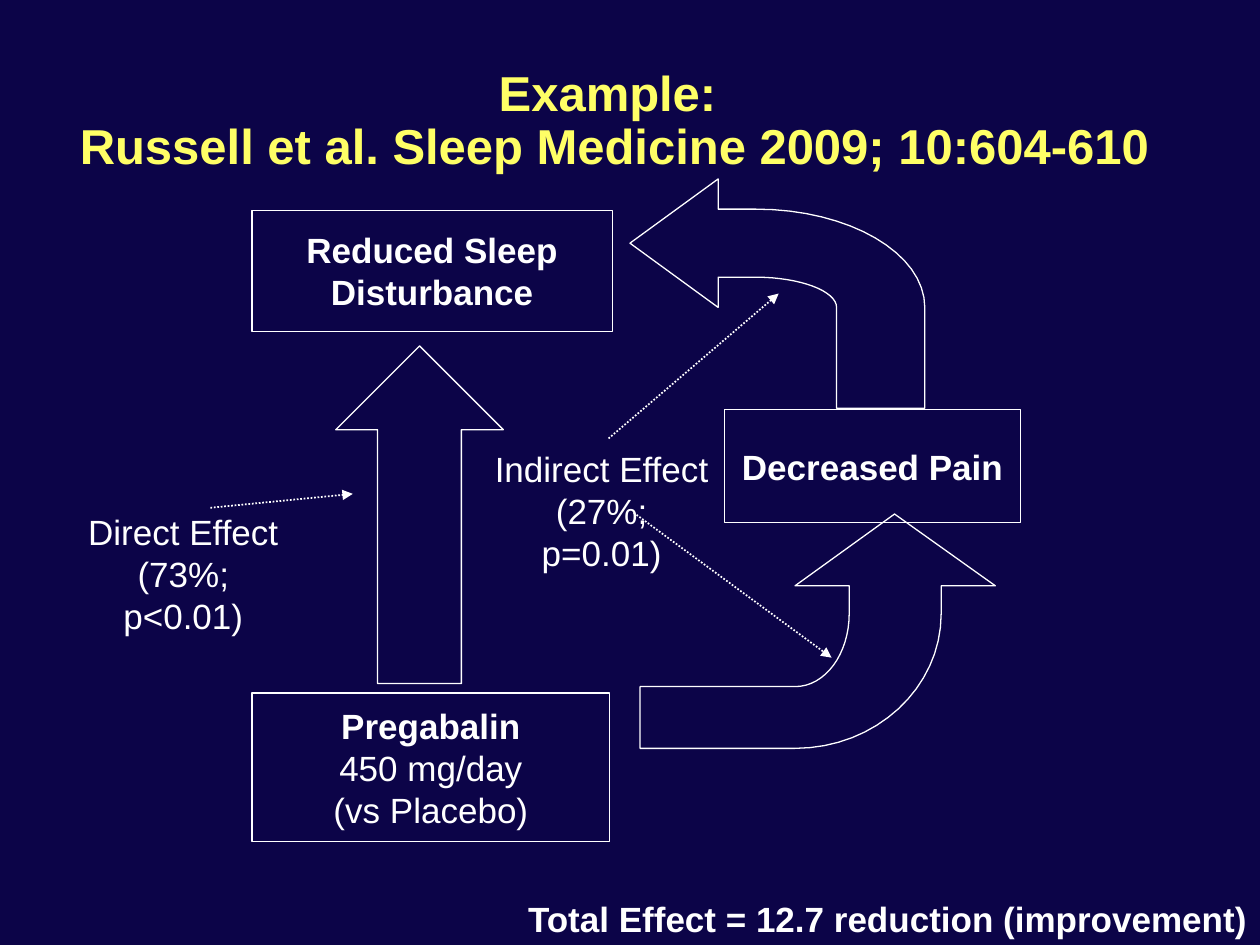
from typing import NamedTuple

from lxml.etree import SubElement
from pptx import Presentation
from pptx.dml.color import RGBColor
from pptx.enum.dml import MSO_LINE_DASH_STYLE as Dash
from pptx.enum.shapes import MSO_CONNECTOR as Connector, MSO_SHAPE as Shape
from pptx.enum.text import MSO_ANCHOR as Anchor, PP_ALIGN as Align
from pptx.oxml.ns import qn
from pptx.util import Inches, Pt

COLORS = {"background": "0C0448", "title": "FFFF66", "ink": "FFFFFF"}
CURVE_STEPS = 16


class Line(NamedTuple):
    text: str
    bold: bool = False


class Block(NamedTuple):
    at: tuple[float, float, float, float]
    lines: list[Line]
    wrap: bool = True
    size: int = 20
    color: str = "ink"
    spacing: float = 1.0


class Pointer(NamedTuple):
    start: tuple[float, float]
    end: tuple[float, float]


TITLE = Block(
    (0.25, 0.5, 9.25, 1.25),
    [Line("Example: \vRussell et al. Sleep Medicine 2009; 10:604-610", True)],
    size=28, color="title", spacing=0.9,
)
STAGES = [
    Block((2, 1.67, 2.86, 0.96), [Line("Reduced Sleep Disturbance", True)]),
    Block((2, 5.5, 2.84, 1.18),
          [Line("Pregabalin", True), Line("450 mg/day"), Line("(vs Placebo)")]),
    Block((5.75, 3.25, 2.35, 0.9), [Line("Decreased Pain", True)]),
]
EFFECTS = [
    Block((0.58, 4, 1.75, 1.1), [Line("Direct Effect "), Line("(73%; p<0.01)")]),
    Block((3.8, 3.5, 1.95, 0.77),
          [Line("Indirect Effect"), Line("(27%;\vp=0.01)")], wrap=False),
    Block((4.09, 7.07, 5.91, 0.43),
          [Line("Total Effect = 12.7 reduction (improvement)", True)], wrap=False),
]
POINTERS = [
    Pointer((5.03, 4.07), (6.6, 5.22)),
    Pointer((4.83, 3.48), (6.18, 2.33)),
    Pointer((1.67, 4.03), (2.8, 3.92)),
]
DRUG_TO_PAIN = [
    (7.1, 4.08), (7.9, 4.65), (7.47, 4.65), (7.47, 4.87),
    (7.47, 5.46, 6.95, 5.94, 6.31, 5.94), (5.08, 5.94), (5.08, 5.45),
    (6.31, 5.45), (6.55, 5.45, 6.74, 5.19, 6.74, 4.87), (6.74, 4.65), (6.31, 4.65),
]
PAIN_TO_SLEEP = [
    (5, 1.93), (5.7, 1.42), (5.7, 1.66), (6, 1.66),
    (6.74, 1.66, 7.34, 2.01, 7.34, 2.44), (7.34, 3.24), (6.64, 3.24),
    (6.64, 2.44), (6.64, 2.31, 6.35, 2.2, 6, 2.2), (5.7, 2.2), (5.7, 2.44),
]


def rgb(name: str) -> RGBColor:
    return RGBColor.from_string(COLORS[name])


def write(shape, block: Block, anchor: Anchor) -> None:
    frame = shape.text_frame
    frame.word_wrap = block.wrap
    frame.vertical_anchor = anchor
    for index, line in enumerate(block.lines):
        paragraph = frame.paragraphs[0] if index == 0 else frame.add_paragraph()
        paragraph.text = line.text
        paragraph.alignment = Align.CENTER
        paragraph.line_spacing = block.spacing
        formats = {"name": "Arial", "size": Pt(block.size), "bold": line.bold}
        for run in paragraph.runs:
            for attribute, value in formats.items():
                setattr(run.font, attribute, value)
            run.font.color.rgb = rgb(block.color)


def outline(shape) -> None:
    shape.shadow.inherit = False
    shape.fill.background()
    shape.line.color.rgb = rgb("ink")
    shape.line.width = Pt(0.75)


def add_label(slide, block: Block) -> None:
    write(slide.shapes.add_textbox(*map(Inches, block.at)), block, Anchor.TOP)


def add_stage(slide, block: Block) -> None:
    stage = slide.shapes.add_shape(Shape.RECTANGLE, *map(Inches, block.at))
    outline(stage)
    write(stage, block, Anchor.MIDDLE)


def add_direct_arrow(slide) -> None:
    arrow = slide.shapes.add_shape(
        Shape.RIGHT_ARROW, Inches(1.99), Inches(3.42), Inches(2.68), Inches(1.33))
    arrow.rotation = 270
    outline(arrow)


def curve_points(start: tuple, curve: tuple) -> list[tuple[float, float]]:
    controls = [start, curve[:2], curve[2:4], curve[4:]]
    points = []
    for step in range(1, CURVE_STEPS + 1):
        t = step / CURVE_STEPS
        weights = ((1 - t) ** 3, 3 * t * (1 - t) ** 2, 3 * t * t * (1 - t), t ** 3)
        points.append(tuple(
            sum(w * control[axis] for w, control in zip(weights, controls))
            for axis in (0, 1)))
    return points


def add_bent_arrow(slide, path: list[tuple]) -> None:
    points = [path[0]]
    for part in path[1:]:
        points += [part] if len(part) == 2 else curve_points(points[-1], part)
    corners = [(Inches(x), Inches(y)) for x, y in points]
    builder = slide.shapes.build_freeform(*corners[0])
    builder.add_line_segments(corners[1:], close=True)
    outline(builder.convert_to_shape())


def add_pointer(slide, pointer: Pointer) -> None:
    connector = slide.shapes.add_connector(
        Connector.STRAIGHT, *map(Inches, pointer.start + pointer.end))
    connector.line.color.rgb = rgb("ink")
    connector.line.width = Pt(1)
    connector.line.dash_style = Dash.ROUND_DOT
    SubElement(connector.line._get_or_add_ln(), qn("a:tailEnd"), type="triangle")
    SubElement(connector._element.spPr, qn("a:effectLst"))


def main() -> None:
    deck = Presentation()
    deck.slide_width, deck.slide_height = Inches(10), Inches(7.5)
    slide = deck.slides.add_slide(deck.slide_layouts[6])
    slide.background.fill.solid()
    slide.background.fill.fore_color.rgb = rgb("background")

    add_label(slide, TITLE)
    for stage in STAGES:
        add_stage(slide, stage)
    add_direct_arrow(slide)
    for path in (DRUG_TO_PAIN, PAIN_TO_SLEEP):
        add_bent_arrow(slide, path)
    for pointer in POINTERS:
        add_pointer(slide, pointer)
    for effect in EFFECTS:
        add_label(slide, effect)
    deck.save("out.pptx")


if __name__ == "__main__":
    main()
